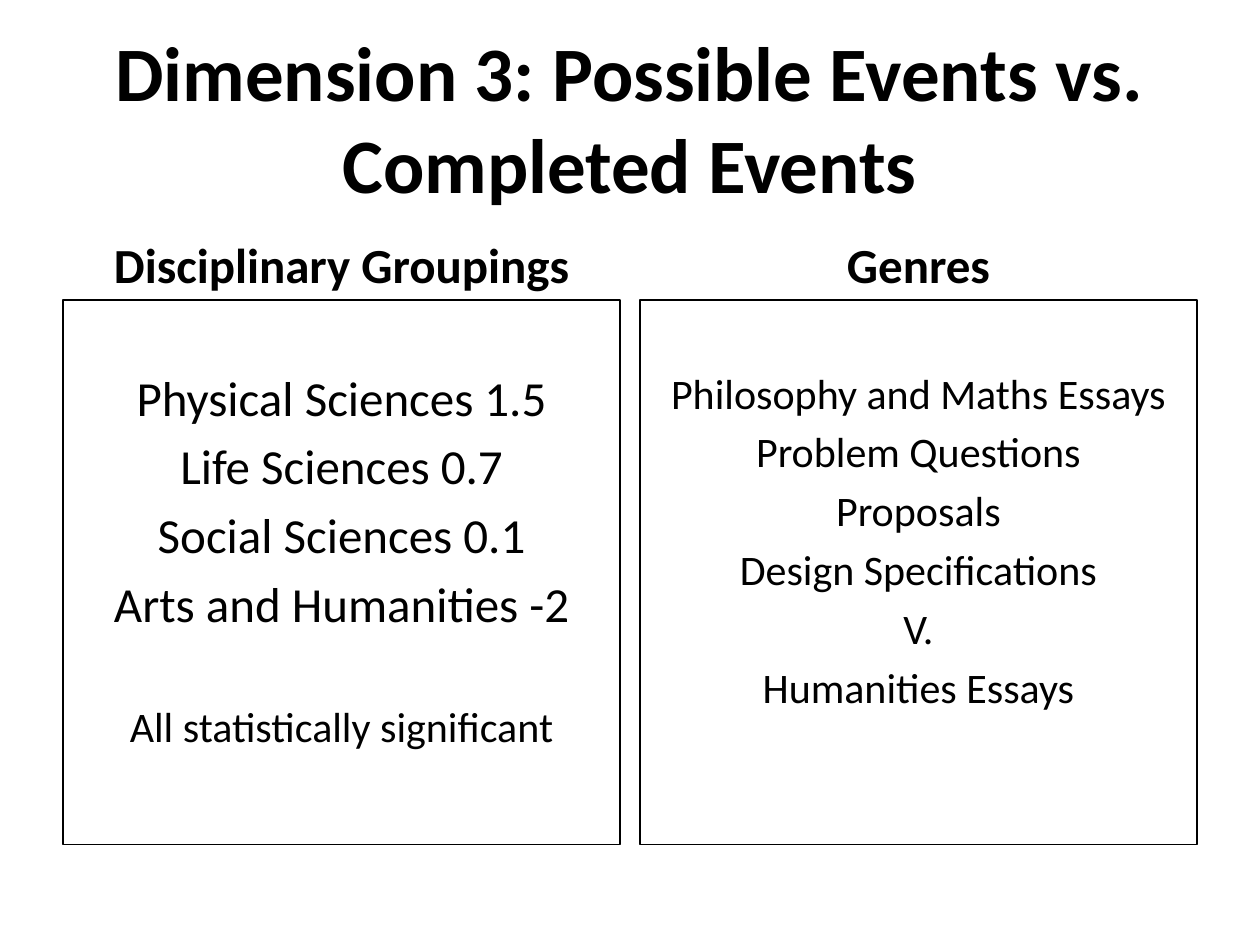
"""Build the Dimension 3 comparison slide with two headed, bordered lists."""
import dataclasses

import lxml.etree
import pptx
import pptx.dml.color
import pptx.enum.text
import pptx.oxml.ns
import pptx.util

Cm = pptx.util.Cm
Pt = pptx.util.Pt
Anchor = pptx.enum.text.MSO_ANCHOR


@dataclasses.dataclass(frozen=True)
class Theme:
    font: str = "Calibri"
    ink: pptx.dml.color.RGBColor = pptx.dml.color.RGBColor(0, 0, 0)
    title_size: int = 44
    large_size: int = 28
    small_size: int = 24
    border_width: float = 0.75
    spacing: float = 0.2
    section_gap: int = 39


@dataclasses.dataclass(frozen=True)
class Line:
    text: str
    size: int
    bold: bool = False
    space_before: float | None = None


@dataclasses.dataclass(frozen=True)
class Box:
    left: float
    top: float
    width: float
    height: float


@dataclasses.dataclass(frozen=True)
class Column:
    heading: str
    lines: list[Line]


THEME = Theme()
MARGIN = 1.27
CONTENT_WIDTH = 22.86
COLUMN_WIDTH = 11.23
LIST_INSET = 1.35
COLUMNS = [
    Column(
        "Disciplinary Groupings",
        [
            Line("Physical Sciences 1.5", THEME.large_size),
            Line("Life Sciences 0.7", THEME.large_size),
            Line("Social Sciences 0.1", THEME.large_size),
            Line("Arts and Humanities -2", THEME.large_size),
            Line("All statistically significant", THEME.small_size, space_before=THEME.section_gap),
        ],
    ),
    Column(
        "Genres",
        [
            Line(text, THEME.small_size)
            for text in (
                "Philosophy and Maths Essays",
                "Problem Questions",
                "Proposals",
                "Design Specifications",
                "V.",
                "Humanities Essays",
            )
        ],
    ),
]


def remove_bullet(paragraph) -> None:
    """Clear the bullet and hanging indent inherited from the layout."""
    properties = paragraph._p.get_or_add_pPr()
    properties.set("marL", "0")
    properties.set("indent", "0")
    lxml.etree.SubElement(properties, pptx.oxml.ns.qn("a:buNone"))


def fill_placeholder(shape, box: Box, lines: list[Line], anchor: Anchor) -> None:
    """Place a placeholder and write its centred lines."""
    shape.left, shape.top = Cm(box.left), Cm(box.top)
    shape.width, shape.height = Cm(box.width), Cm(box.height)
    text_frame = shape.text_frame
    text_frame.text = "\n".join(line.text for line in lines)
    text_frame.word_wrap = True
    text_frame.auto_size = pptx.enum.text.MSO_AUTO_SIZE.NONE
    text_frame.vertical_anchor = anchor
    for index, (paragraph, line) in enumerate(zip(text_frame.paragraphs, lines)):
        paragraph.alignment = pptx.enum.text.PP_ALIGN.CENTER
        gap = line.size * THEME.spacing if line.space_before is None else line.space_before
        paragraph.space_before = Pt(gap if index else 0)
        remove_bullet(paragraph)
        for run in paragraph.runs:
            run.font.name = THEME.font
            run.font.size = Pt(line.size)
            run.font.bold = line.bold
            run.font.color.rgb = THEME.ink


def draw_column(heading, body, left: float, column: Column) -> None:
    """Draw a bold heading above a bordered list."""
    heading_line = Line(column.heading, THEME.large_size, bold=True)
    fill_placeholder(heading, Box(left, 4.27, COLUMN_WIDTH, 1.78), [heading_line], Anchor.BOTTOM)
    fill_placeholder(body, Box(left, 6.05, COLUMN_WIDTH, 10.97), column.lines, Anchor.TOP)
    body.text_frame.margin_top = Cm(LIST_INSET)
    body.line.color.rgb = THEME.ink
    body.line.width = Pt(THEME.border_width)


def main() -> None:
    """Create and save the presentation."""
    presentation = pptx.Presentation()
    presentation.slide_width, presentation.slide_height = Cm(25.4), Cm(19.05)
    comparison_layout = presentation.slide_layouts.get_by_name("Comparison")
    slide = presentation.slides.add_slide(comparison_layout)
    title, *bodies = slide.placeholders
    title_line = Line(
        "Dimension 3: Possible Events vs. Completed Events", THEME.title_size, bold=True
    )
    fill_placeholder(title, Box(MARGIN, 0.76, CONTENT_WIDTH, 3.18), [title_line], Anchor.MIDDLE)
    column_step = CONTENT_WIDTH - COLUMN_WIDTH
    for index, column in enumerate(COLUMNS):
        heading, body = bodies[2 * index:2 * index + 2]
        draw_column(heading, body, MARGIN + index * column_step, column)
    presentation.save("out.pptx")


if __name__ == "__main__":
    main()
